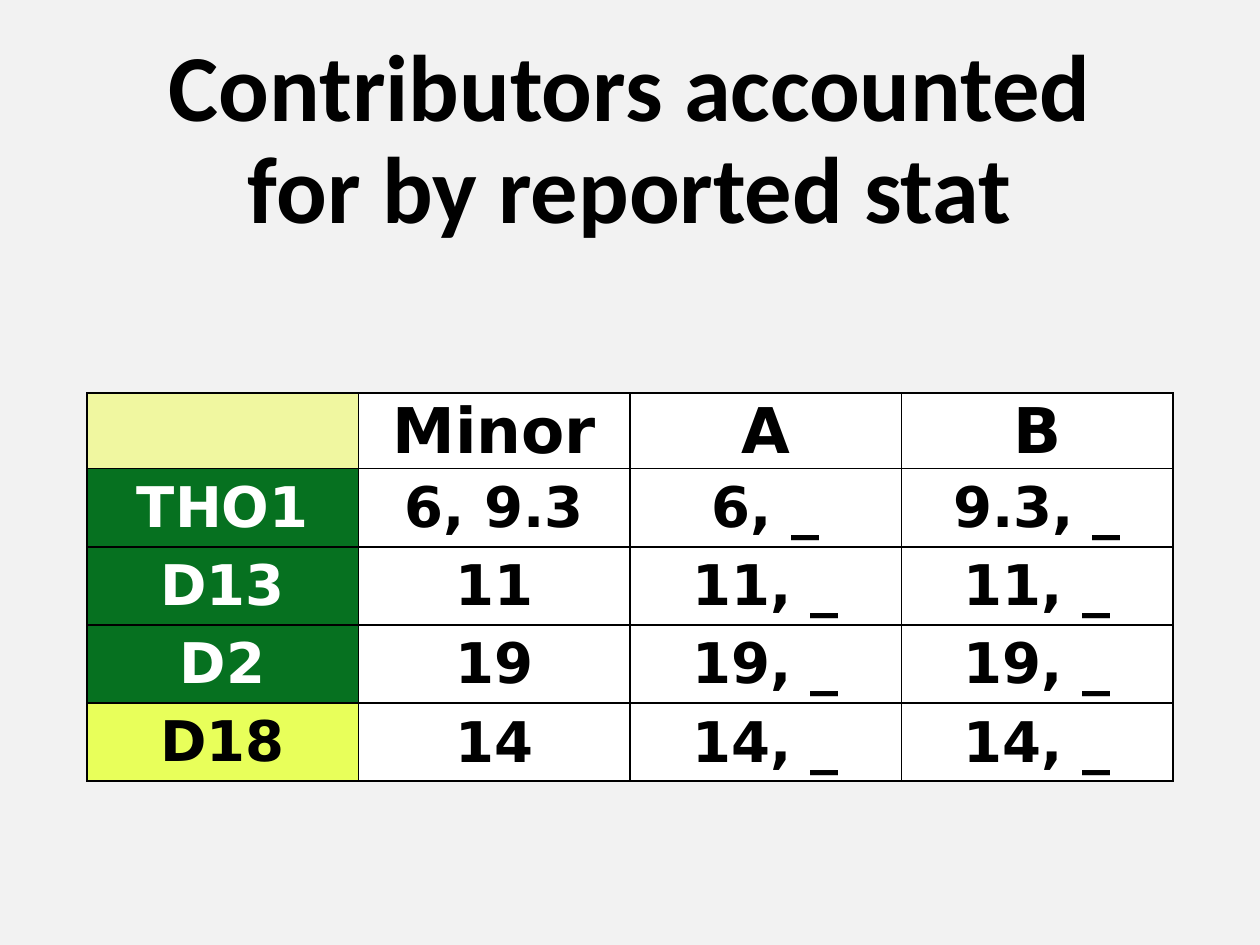
from lxml import etree
from pptx import Presentation
from pptx.dml.color import RGBColor
from pptx.enum.text import MSO_ANCHOR, MSO_AUTO_SIZE, PP_ALIGN
from pptx.oxml.ns import qn
from pptx.util import Inches, Pt

CENTER = PP_ALIGN.CENTER
MIDDLE = MSO_ANCHOR.MIDDLE
NO_AUTOFIT = MSO_AUTO_SIZE.NONE
TITLE_ONLY = 5

BLACK, WHITE = "000000", "FFFFFF"
BACKGROUND, CORNER = "F2F2F2", "F0F7A0"
GREEN, YELLOW = "067120", "E8FF5A"

TITLE_LINES = ["Contributors accounted", "for by reported stat"]
HEADERS = ["", "Minor", "A", "B"]
LOCI = [
    ["THO1", "6, 9.3", "6, _", "9.3, _"],
    ["D13", "11", "11, _", "11, _"],
    ["D2", "19", "19, _", "19, _"],
    ["D18", "14", "14, _", "14, _"],
]
LABEL_COLORS = {"D18": (YELLOW, BLACK)}
HEADER_HEIGHT, LOCUS_HEIGHT = 0.6, 0.62


def rgb(color):
    return RGBColor.from_string(color)


def set_attributes(target, values):
    for name, value in values.items():
        setattr(target, name, value)


def add_run(paragraph, text, font_name, size, color):
    run = paragraph.add_run()
    run.text = text
    set_attributes(run.font, {"name": font_name, "size": Pt(size), "bold": True})
    run.font.color.rgb = rgb(color)


def place_title(title, left, top, width, height):
    set_attributes(title, {"left": Inches(left), "top": Inches(top),
                           "width": Inches(width), "height": Inches(height)})
    set_attributes(title.text_frame, {"word_wrap": True, "auto_size": NO_AUTOFIT,
                                      "vertical_anchor": MIDDLE})
    paragraph = title.text_frame.paragraphs[0]
    set_attributes(paragraph, {"alignment": CENTER, "line_spacing": 0.9})
    for index, line in enumerate(TITLE_LINES):
        if index:
            paragraph.add_line_break()
        add_run(paragraph, line, "Calibri", 54, BLACK)


def add_borders(cell):
    """Draw a thin black line on each side; lines must precede the fill."""
    properties = cell._tc.get_or_add_tcPr()
    for position, side in enumerate(("a:lnL", "a:lnR", "a:lnT", "a:lnB")):
        line = etree.Element(qn(side), w=str(Pt(1)))
        fill = etree.SubElement(line, qn("a:solidFill"))
        etree.SubElement(fill, qn("a:srgbClr"), val=BLACK)
        properties.insert(position, line)


def format_cell(cell, text, size, fill, color, top_margin, bottom_margin):
    set_attributes(cell, {"margin_left": Inches(0.01), "margin_right": Inches(0.01),
                          "margin_top": Inches(top_margin),
                          "margin_bottom": Inches(bottom_margin),
                          "vertical_anchor": MIDDLE})
    cell.fill.solid()
    cell.fill.fore_color.rgb = rgb(fill)
    add_borders(cell)
    if text:
        paragraph = cell.text_frame.paragraphs[0]
        paragraph.alignment = CENTER
        add_run(paragraph, text, "DejaVu Sans", size, color)


def add_locus_table(slide, left, top, width):
    rows = [HEADERS] + LOCI
    heights = [HEADER_HEIGHT] + [LOCUS_HEIGHT] * len(LOCI)
    table = slide.shapes.add_table(
        len(rows), len(HEADERS), Inches(left), Inches(top),
        Inches(width), Inches(sum(heights))).table
    for row_index, texts in enumerate(rows):
        table.rows[row_index].height = Inches(heights[row_index])
        size = 32 if row_index else 36
        for column_index, text in enumerate(texts):
            fill, color, margins = WHITE, BLACK, (0.01, 0)
            if column_index == 0 and row_index == 0:
                fill = CORNER
            elif column_index == 0:
                fill, color = LABEL_COLORS.get(text, (GREEN, WHITE))
                margins = (0.05, 0.05)
            format_cell(table.cell(row_index, column_index), text, size,
                        fill, color, *margins)


def main():
    presentation = Presentation()
    presentation.slide_width = Inches(10)
    presentation.slide_height = Inches(7.5)
    slide = presentation.slides.add_slide(presentation.slide_layouts[TITLE_ONLY])
    slide.background.fill.solid()
    slide.background.fill.fore_color.rgb = rgb(BACKGROUND)
    place_title(slide.shapes.title, 0.69, 0.4, 8.62, 1.45)
    add_locus_table(slide, 0.69, 3.12, 8.62)
    presentation.save("out.pptx")


if __name__ == "__main__":
    main()
